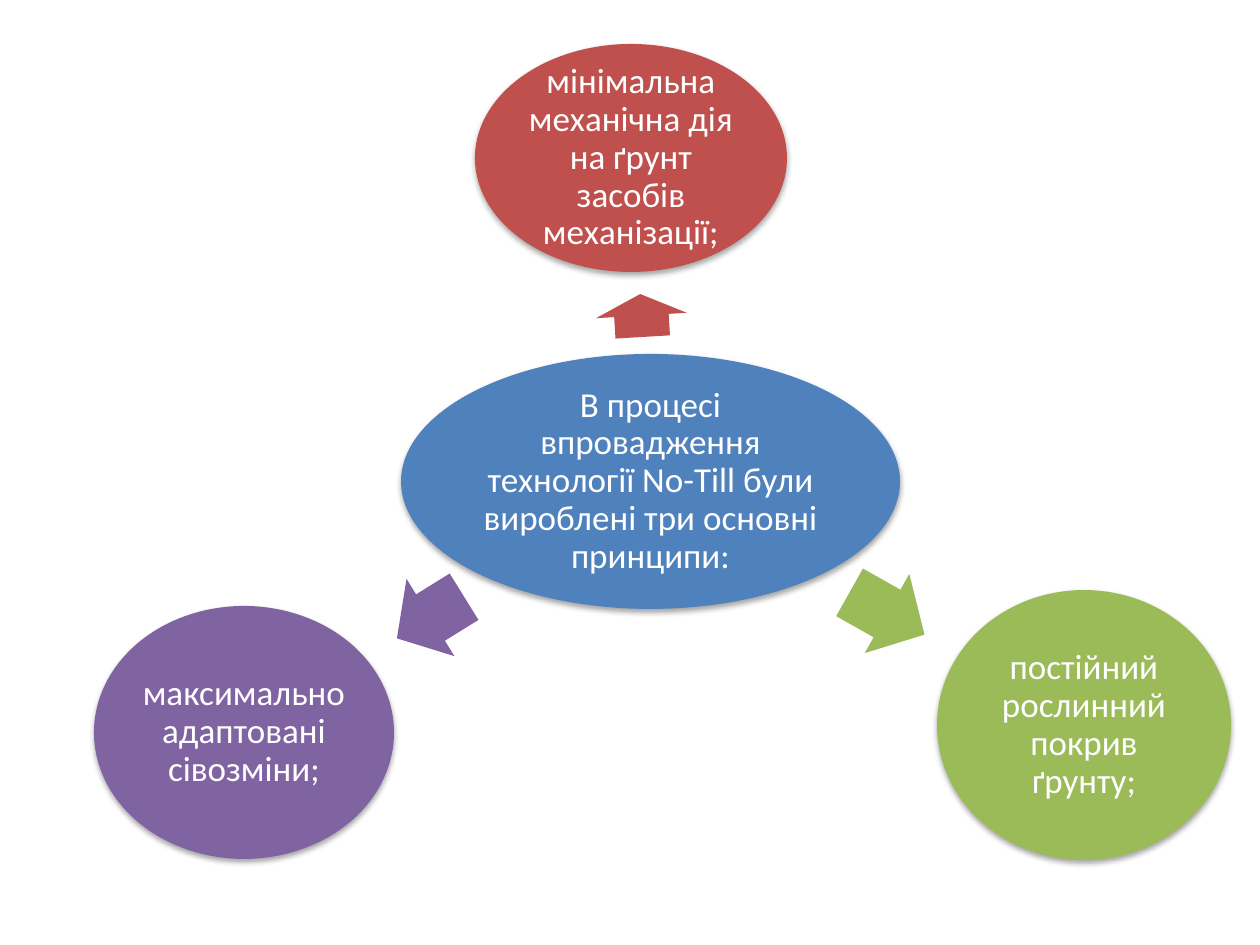
import pptx
import pptx.util
import pptx.dml.color
import pptx.enum.shapes
import pptx.enum.text

SCALE = 914400 / 126  # EMU in one px
SLIDE_SIZE = (1260, 945)
FONT = "Calibri"
TEXT_SIZE = 20
TEXT_INSET = 4

# text, fill, (left, top, width, height)
HUB = (
    "В процесі впровадження технології No-Till були вироблені три основні принципи:",
    "4F81BD", (401, 354, 499, 255),
)
# text, fill, ellipse box, arrow box, arrow rotation
PRINCIPLES = [
    ("мінімальна механічна дія на ґрунт засобів механізації;",
     "C0504D", (475, 44, 312, 228), (620, 270, 43, 91), 266.6),
    ("постійний рослинний покрив ґрунту;",
     "9BBB59", (937, 590, 294, 270), (844, 568, 86, 91), 29.4),
    ("максимально адаптовані сівозміни;",
     "8064A2", (94, 606, 300, 253), (391, 572, 79, 91), 148.2),
]


def px(length):
    return pptx.util.Emu(round(length * SCALE))


def color(value):
    return pptx.dml.color.RGBColor.from_string(value)


def add_filled(page, kind, place, fill):
    shape = page.shapes.add_shape(kind, *map(px, place))
    shape.fill.solid()
    shape.fill.fore_color.rgb = color(fill)
    shape.line.fill.background()
    return shape


def add_ellipse(page, text, fill, place):
    """Add an ellipse with centred text; it keeps the soft theme shadow."""
    ellipse = add_filled(page, pptx.enum.shapes.MSO_SHAPE.OVAL, place, fill)
    frame = ellipse.text_frame
    frame.word_wrap = True
    frame.vertical_anchor = pptx.enum.text.MSO_ANCHOR.MIDDLE
    frame.margin_left = frame.margin_right = px(TEXT_INSET)
    frame.margin_top = frame.margin_bottom = px(TEXT_INSET)
    para = frame.paragraphs[0]
    para.alignment = pptx.enum.text.PP_ALIGN.CENTER
    para.line_spacing = 0.9
    span = para.add_run()
    span.text = text
    span.font.name = FONT
    span.font.size = pptx.util.Pt(TEXT_SIZE)
    span.font.color.rgb = color("FFFFFF")


def add_arrow(page, fill, place, rotation):
    arrow = add_filled(page, pptx.enum.shapes.MSO_SHAPE.RIGHT_ARROW, place, fill)
    arrow.shadow.inherit = False
    arrow.adjustments[0] = 0.6
    arrow.adjustments[1] = 0.5
    arrow.rotation = rotation


def main():
    deck = pptx.Presentation()
    deck.slide_width, deck.slide_height = map(px, SLIDE_SIZE)
    page = deck.slides.add_slide(deck.slide_layouts[6])
    add_ellipse(page, *HUB)
    for text, fill, place, arrow_place, rotation in PRINCIPLES:
        add_arrow(page, fill, arrow_place, rotation)
        add_ellipse(page, text, fill, place)
    deck.save("out.pptx")


if __name__ == "__main__":
    main()
